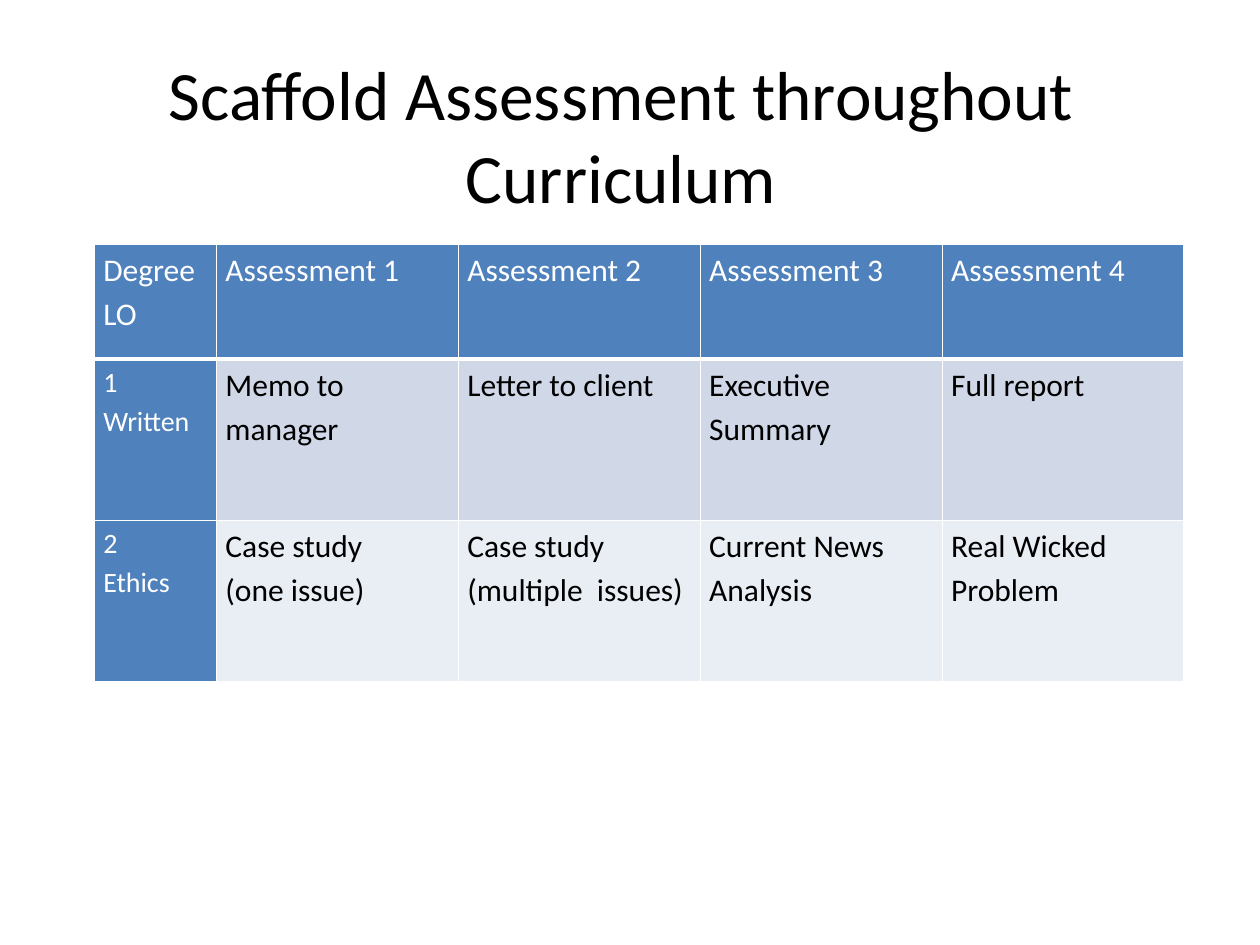
from dataclasses import dataclass

from lxml import etree
from pptx import Presentation
from pptx.dml.color import RGBColor
from pptx.enum.text import MSO_ANCHOR, PP_ALIGN
from pptx.oxml.ns import qn
from pptx.util import Inches, Pt

MIDDLE, TOP = MSO_ANCHOR.MIDDLE, MSO_ANCHOR.TOP
CENTER, LEFT = PP_ALIGN.CENTER, PP_ALIGN.LEFT


@dataclass(frozen=True)
class Theme:
    font: str = "Calibri"
    white: str = "FFFFFF"
    black: str = "000000"
    accent: str = "4F81BD"
    bands: tuple[str, ...] = ("D0D8E8", "E9EDF4")
    title_size: float = 39.6
    body_size: float = 18
    outcome_size: float = 16
    border: float = 1
    header_border: float = 3


@dataclass(frozen=True)
class AssessmentRow:
    outcome: str
    tasks: tuple[str, ...]
    height: float


THEME = Theme()
COLUMN_WIDTHS = [0.97] + [1.92] * 4
ROWS = [
    AssessmentRow("Degree LO", tuple(f"Assessment {n}" for n in range(1, 5)), 0.91),
    AssessmentRow(
        "1\nWritten",
        ("Memo to manager", "Letter to client", "Executive Summary", "Full report"),
        1.28,
    ),
    AssessmentRow(
        "2\nEthics",
        (
            "Case study\n(one issue)",
            "Case study (multiple  issues)",
            "Current News Analysis",
            "Real Wicked Problem",
        ),
        1.28,
    ),
]


def write_text(tf, text: str, *, size: float, color: str, align=LEFT,
               spacing: float = 1.0) -> None:
    tf.word_wrap = True
    for i, line in enumerate(text.split("\n")):
        p = tf.add_paragraph() if i else tf.paragraphs[0]
        p.alignment = align
        p.line_spacing = spacing
        r = p.add_run()
        r.text = line
        r.font.name = THEME.font
        r.font.size = Pt(size)
        r.font.bold = False
        r.font.color.rgb = RGBColor.from_string(color)


def set_borders(cell, bottom: float) -> None:
    props = cell._tc.get_or_add_tcPr()
    for side in "LRTB":
        width = bottom if side == "B" else THEME.border
        ln = etree.SubElement(props, qn(f"a:ln{side}"), w=str(Pt(width)))
        fill = etree.SubElement(ln, qn("a:solidFill"))
        etree.SubElement(fill, qn("a:srgbClr"), val=THEME.white)


def fill_cell(cell, text: str, *, fill: str, size: float, color: str,
              bottom: float) -> None:
    cell.margin_left = cell.margin_right = Inches(0.07)
    cell.margin_top, cell.margin_bottom = Inches(0.01), Inches(0)
    cell.vertical_anchor = TOP
    set_borders(cell, bottom)
    cell.fill.solid()
    cell.fill.fore_color.rgb = RGBColor.from_string(fill)
    write_text(cell.text_frame, text, size=size, color=color, spacing=1.15)


def add_title(s, text: str) -> None:
    sp = s.shapes.add_textbox(Inches(0.43), Inches(0.44), Inches(9), Inches(1.25))
    sp.text_frame.vertical_anchor = MIDDLE
    write_text(sp.text_frame, text, size=THEME.title_size, color=THEME.black,
               align=CENTER)


def add_assessment_table(s, rows: list[AssessmentRow]) -> None:
    table = s.shapes.add_table(
        len(rows), len(COLUMN_WIDTHS), Inches(0.75), Inches(1.94),
        Inches(sum(COLUMN_WIDTHS)), Inches(sum(row.height for row in rows)),
    ).table
    table.first_col = True
    for column, width in zip(table.columns, COLUMN_WIDTHS):
        column.width = Inches(width)
    for i, row in enumerate(rows):
        table.rows[i].height = Inches(row.height)
        for j, text in enumerate((row.outcome, *row.tasks)):
            is_header, is_outcome = i == 0, j == 0
            accented = is_header or is_outcome
            fill_cell(
                table.cell(i, j), text,
                fill=THEME.accent if accented else THEME.bands[(i - 1) % 2],
                size=THEME.outcome_size if is_outcome and not is_header
                else THEME.body_size,
                color=THEME.white if accented else THEME.black,
                bottom=THEME.header_border if is_header else THEME.border,
            )


def main() -> None:
    prs = Presentation()
    prs.slide_width, prs.slide_height = Inches(10), Inches(7.5)
    s = prs.slides.add_slide(prs.slide_layouts[6])
    add_title(s, "Scaffold Assessment throughout Curriculum")
    add_assessment_table(s, ROWS)
    prs.save("out.pptx")


if __name__ == "__main__":
    main()
